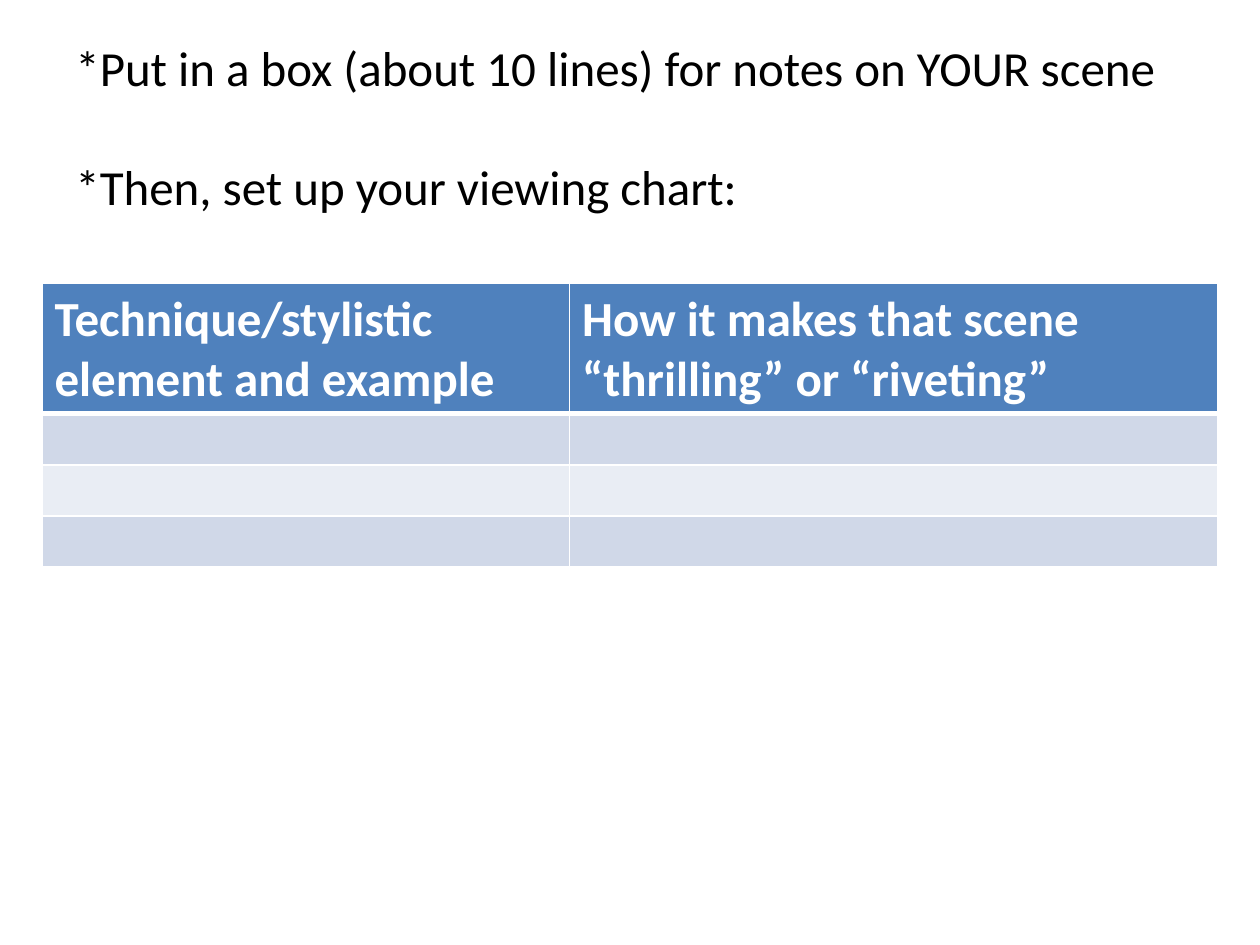
from lxml import etree
from pptx import Presentation
from pptx.dml.color import RGBColor
from pptx.oxml.ns import qn
from pptx.util import Pt

BLACK = RGBColor(0x00, 0x00, 0x00)
WHITE = RGBColor(0xFF, 0xFF, 0xFF)
HEADER_BLUE = RGBColor(0x4F, 0x81, 0xBD)
BAND_DARK = RGBColor(0xD0, 0xD8, 0xE8)
BAND_LIGHT = RGBColor(0xE9, 0xED, 0xF4)

BLANK_LAYOUT = 6
BODY_FORMAT = {"name": "Calibri", "size": Pt(28), "bold": False}
HEADER_FORMAT = {**BODY_FORMAT, "bold": True}

INSTRUCTIONS = [
    "*Put in a box (about 10 lines) for notes on YOUR scene",
    "*Then, set up your viewing chart:",
]
HEADERS = [
    "Technique/stylistic element and example",
    "How it makes that scene “thrilling” or “riveting”",
]
COLUMN_WIDTHS = [301.5, 370.5]
ROW_HEIGHTS = [73.8, 29.2, 29.2, 29.2]


def format_paragraph(paragraph, font_format, color):
    for attribute, value in font_format.items():
        setattr(paragraph.font, attribute, value)
    paragraph.font.color.rgb = color


def add_instructions(slide, lines):
    box = slide.shapes.add_textbox(Pt(36), Pt(18), Pt(660), Pt(110))
    frame = box.text_frame
    frame.word_wrap = True
    for index, line in enumerate(lines):
        paragraph = frame.paragraphs[0] if index == 0 else frame.add_paragraph()
        paragraph.text = line
        if index:
            paragraph.space_before = Pt(34)
        format_paragraph(paragraph, BODY_FORMAT, BLACK)


def add_cell_borders(cell, bottom_width):
    properties = cell._tc.get_or_add_tcPr()
    widths = {"a:lnL": 1, "a:lnR": 1, "a:lnT": 1, "a:lnB": bottom_width}
    for tag, width in widths.items():
        line = etree.SubElement(properties, qn(tag), w=str(Pt(width)))
        fill = etree.SubElement(line, qn("a:solidFill"))
        etree.SubElement(fill, qn("a:srgbClr"), val=str(WHITE))


def fill_cell(cell, color, bottom_width=1):
    add_cell_borders(cell, bottom_width)
    cell.fill.solid()
    cell.fill.fore_color.rgb = color


def add_viewing_chart(slide):
    """Add the table: a header row above empty banded rows."""
    table = slide.shapes.add_table(
        len(ROW_HEIGHTS), len(COLUMN_WIDTHS), Pt(24), Pt(162),
        Pt(sum(COLUMN_WIDTHS)), Pt(sum(ROW_HEIGHTS))).table
    for column, width in zip(table.columns, COLUMN_WIDTHS):
        column.width = Pt(width)
    for row, height in zip(table.rows, ROW_HEIGHTS):
        row.height = Pt(height)

    for column_index, header in enumerate(HEADERS):
        cell = table.cell(0, column_index)
        cell.text = header
        format_paragraph(cell.text_frame.paragraphs[0], HEADER_FORMAT, WHITE)
        fill_cell(cell, HEADER_BLUE, bottom_width=3)
        for row_index in range(1, len(ROW_HEIGHTS)):
            band = BAND_DARK if row_index % 2 else BAND_LIGHT
            fill_cell(table.cell(row_index, column_index), band)


def main():
    presentation = Presentation()
    presentation.slide_width = Pt(720)
    presentation.slide_height = Pt(540)
    slide = presentation.slides.add_slide(
        presentation.slide_layouts[BLANK_LAYOUT])
    add_instructions(slide, INSTRUCTIONS)
    add_viewing_chart(slide)
    presentation.save("out.pptx")


if __name__ == "__main__":
    main()
